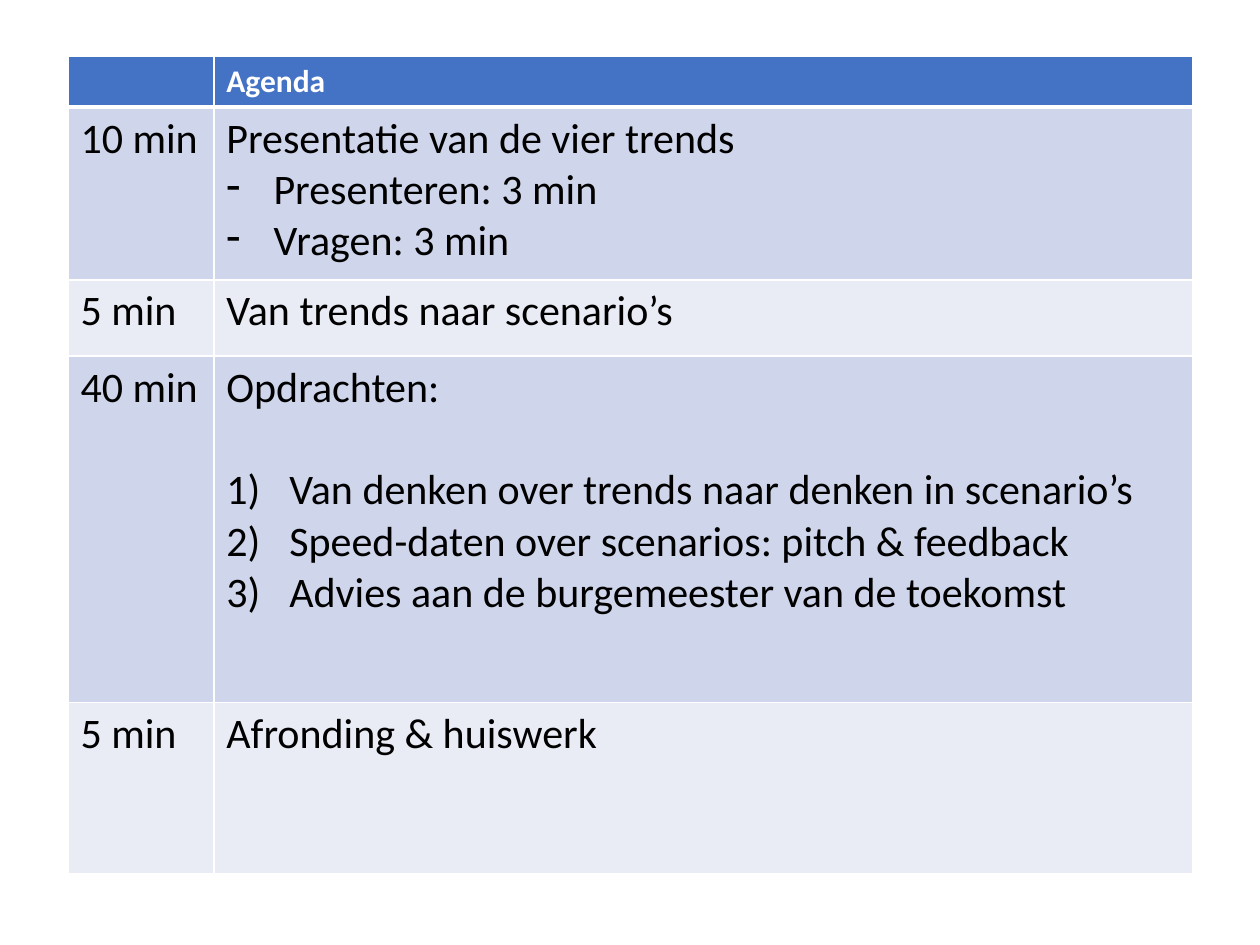
"""Build the agenda slide: a two-column table of durations and activities."""
from lxml import etree
from pptx import Presentation
from pptx.dml.color import RGBColor
from pptx.oxml.ns import qn
from pptx.util import Cm, Pt

FONT = "Calibri"
WHITE, BLACK = "FFFFFF", "000000"
HEADER_FILL, BAND_FILLS = "4472C4", ("CFD5EA", "E9EBF5")
LINE_WIDTH, HEADER_LINE_WIDTH = 1, 3
LIST_GAP = Pt(29.3)

DASH = ("buChar", {"char": "-"}, Cm(0.95))
NUMBER = ("buAutoNum", {"type": "arabicParenR"}, Cm(1.27))

LEFT, TOP = 1.37, 1.13
COLUMN_WIDTHS = (2.94, 19.74)
ROWS = [
    (0.97, "", ["Agenda"], None, 0),
    (3.48, "10 min",
     ["Presentatie van de vier trends", "Presenteren: 3 min", "Vragen: 3 min"], DASH, 0),
    (1.54, "5 min", ["Van trends naar scenario’s"], None, 0),
    (6.98, "40 min",
     ["Opdrachten:",
      "Van denken over trends naar denken in scenario’s",
      "Speed-daten over scenarios: pitch & feedback",
      "Advies aan de burgemeester van de toekomst"], NUMBER, LIST_GAP),
    (3.45, "5 min", ["Afronding & huiswerk"], None, 0),
]


def color(value):
    return RGBColor.from_string(value)


def set_borders(cell, top_width, bottom_width):
    properties = cell._tc.get_or_add_tcPr()
    widths = {"lnL": LINE_WIDTH, "lnR": LINE_WIDTH, "lnT": top_width, "lnB": bottom_width}
    for tag, width in widths.items():
        line = etree.SubElement(properties, qn(f"a:{tag}"), w=str(Pt(width)))
        fill = etree.SubElement(line, qn("a:solidFill"))
        etree.SubElement(fill, qn("a:srgbClr"), val=WHITE)


def set_bullet(paragraph, bullet):
    tag, attributes, indent = bullet
    properties = paragraph._p.get_or_add_pPr()
    properties.set("marL", str(indent))
    properties.set("indent", str(-indent))
    etree.SubElement(properties, qn(f"a:{tag}"), attributes)


def write_cell(cell, lines, bullet, gap, is_header):
    cell.text_frame.text = "\n".join(lines)
    for index, paragraph in enumerate(cell.text_frame.paragraphs):
        if index == 1 and gap:
            paragraph.space_before = gap
        if index and bullet:
            set_bullet(paragraph, bullet)
        font = paragraph.font if not paragraph.runs else paragraph.runs[0].font
        font.name = FONT
        font.size = Pt(18 if is_header else 24)
        font.bold = is_header
        font.color.rgb = color(WHITE if is_header else BLACK)


def main():
    presentation = Presentation()
    presentation.slide_width, presentation.slide_height = Cm(25.4), Cm(19.05)
    slide = presentation.slides.add_slide(presentation.slide_layouts[6])
    table = slide.shapes.add_table(
        len(ROWS), len(COLUMN_WIDTHS), Cm(LEFT), Cm(TOP),
        Cm(sum(COLUMN_WIDTHS)), Cm(sum(row[0] for row in ROWS))).table
    for column, width in zip(table.columns, COLUMN_WIDTHS):
        column.width = Cm(width)

    for index, (height, duration, activity, bullet, gap) in enumerate(ROWS):
        is_header = index == 0
        table.rows[index].height = Cm(height)
        fill = HEADER_FILL if is_header else BAND_FILLS[(index - 1) % 2]
        top_width = HEADER_LINE_WIDTH if index == 1 else LINE_WIDTH
        bottom_width = HEADER_LINE_WIDTH if is_header else LINE_WIDTH
        for cell, lines in zip(table.rows[index].cells, ([duration], activity)):
            set_borders(cell, top_width, bottom_width)
            cell.fill.solid()
            cell.fill.fore_color.rgb = color(fill)
            write_cell(cell, lines, bullet, gap, is_header)

    presentation.save("out.pptx")


if __name__ == "__main__":
    main()
